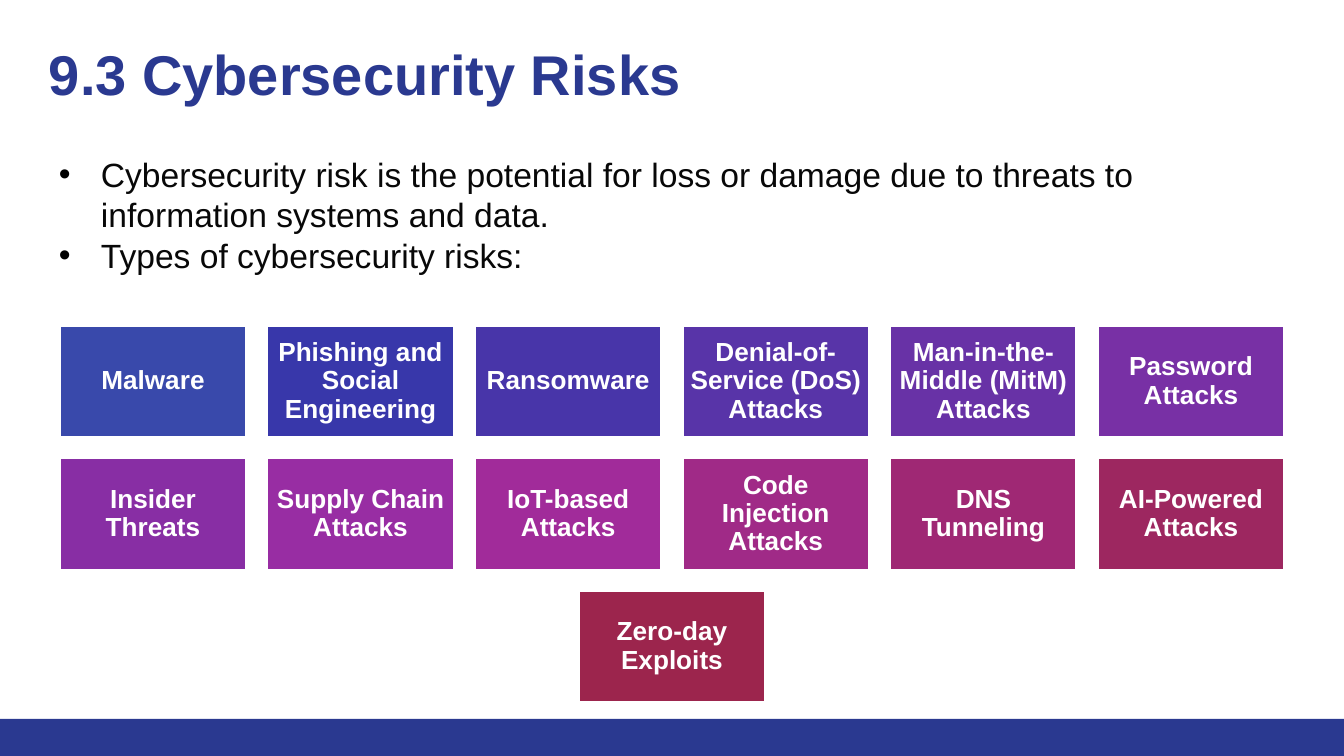
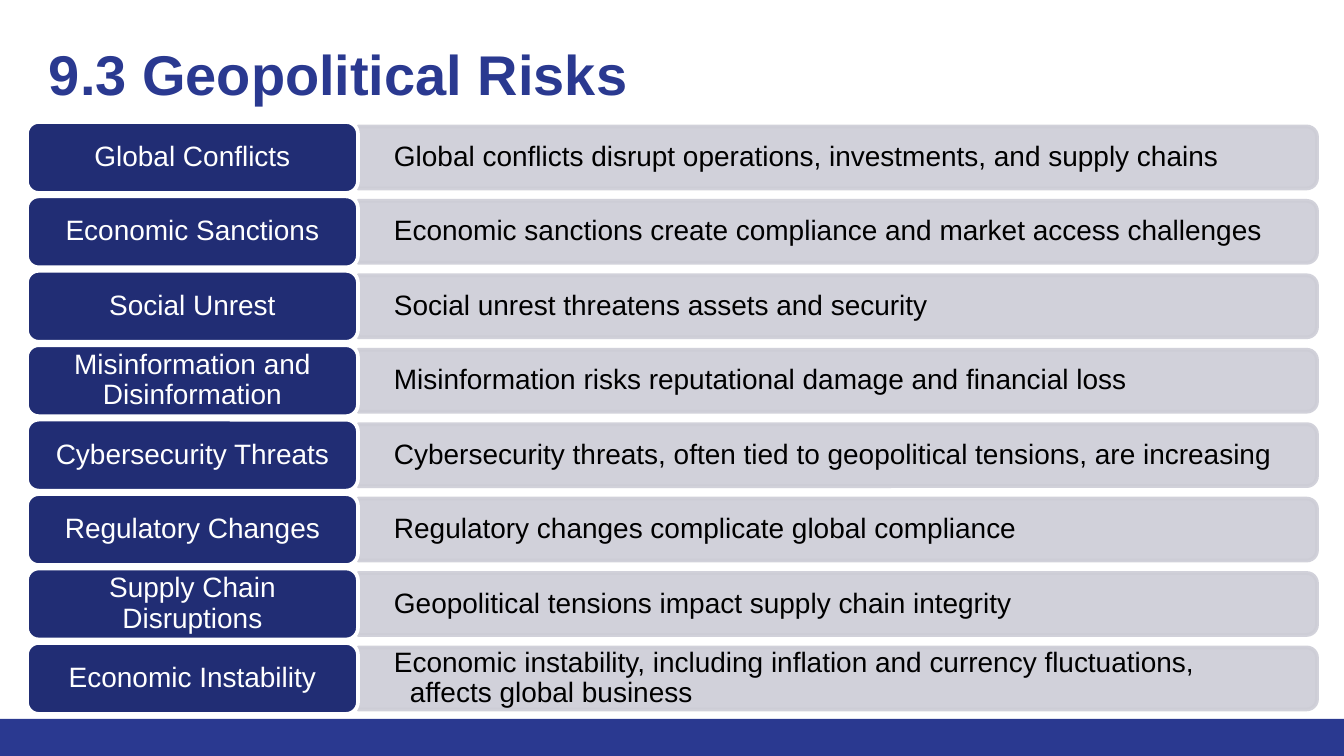
from dataclasses import dataclass
from typing import NamedTuple

import pptx
import pptx.dml.color
import pptx.enum.shapes
import pptx.enum.text
import pptx.oxml.ns
import pptx.util
from lxml import etree

SHAPE = pptx.enum.shapes.MSO_SHAPE
ALIGN = pptx.enum.text.PP_ALIGN
ANCHOR = pptx.enum.text.MSO_ANCHOR
PX_PER_INCH = 134.4


@dataclass(frozen=True)
class Theme:
    font: str = "Arial"
    brand: str = "2A3990"
    label: str = "212D74"
    bar: str = "CDCDD6"
    bar_opacity: int = 90
    white: str = "FFFFFF"
    black: str = "000000"
    body: str = "080808"
    title_size: int = 30
    body_size: int = 18
    row_size: int = 15
    tile_size: int = 14
    outline: int = 2
    tight: float = 0.9


THEME = Theme()


class Box(NamedTuple):
    left: float
    top: float
    width: float
    height: float


SLIDE = Box(0, 0, 1344, 756)
BAND = Box(0, 719, 1344, 37)
TITLE = Box(36, 27, 1236, 120)
INTRO = Box(46, 147, 1253, 136)
TILES = Box(59, 325, 1226, 378)
ROWS = Box(27, 122, 1290, 592)

INTRO_POINTS = [
    "Cybersecurity risk is the potential for loss or damage due to threats to "
    "information systems and data.",
    "Types of cybersecurity risks:",
]

CYBER_RISKS = [
    ("Malware", "3949AB"),
    ("Phishing and Social Engineering", "3837AA"),
    ("Ransomware", "4835A9"),
    ("Denial-of-Service (DoS) Attacks", "5834A8"),
    ("Man-in-the-Middle (MitM) Attacks", "6832A6"),
    ("Password Attacks", "7830A5"),
    ("Insider Threats", "882EA4"),
    ("Supply Chain Attacks", "982DA3"),
    ("IoT-based Attacks", "A12B9A"),
    ("Code Injection Attacks", "A02A87"),
    ("DNS Tunneling", "9F2874"),
    ("AI-Powered Attacks", "9D2760"),
    ("Zero-day Exploits", "9C254D"),
]

GEOPOLITICAL_RISKS = [
    ("Global Conflicts",
     "Global conflicts disrupt operations, investments, and supply chains"),
    ("Economic Sanctions",
     "Economic sanctions create compliance and market access challenges"),
    ("Social Unrest", "Social unrest threatens assets and security"),
    ("Misinformation and Disinformation",
     "Misinformation risks reputational damage and financial loss"),
    ("Cybersecurity Threats",
     "Cybersecurity threats, often tied to geopolitical tensions, are increasing"),
    ("Regulatory Changes", "Regulatory changes complicate global compliance"),
    ("Supply Chain Disruptions",
     "Geopolitical tensions impact supply chain integrity"),
    ("Economic Instability",
     "Economic instability, including inflation and currency fluctuations, "
     "affects global business"),
]


def px(length):
    return pptx.util.Emu(round(length * 914400 / PX_PER_INCH))


def emu(box):
    return [px(length) for length in box]


def rgb(color):
    return pptx.dml.color.RGBColor.from_string(color)


def set_opacity(color_format_owner, percent):
    for color in color_format_owner.iter(pptx.oxml.ns.qn("a:srgbClr")):
        alpha = etree.SubElement(color, pptx.oxml.ns.qn("a:alpha"))
        alpha.set("val", str(percent * 1000))


def add_block(slide, kind, box, fill, line=None):
    block = slide.shapes.add_shape(kind, *emu(box))
    block.shadow.inherit = False
    block.fill.solid()
    block.fill.fore_color.rgb = rgb(fill)
    if line:
        block.line.color.rgb = rgb(line)
        block.line.width = pptx.util.Pt(THEME.outline)
    else:
        block.line.fill.background()
    return block


def set_frame(frame, anchor, inset_x, inset_y):
    frame.word_wrap = True
    frame.auto_size = pptx.enum.text.MSO_AUTO_SIZE.NONE
    frame.vertical_anchor = anchor
    frame.margin_left = frame.margin_right = px(inset_x)
    frame.margin_top = frame.margin_bottom = px(inset_y)


def set_hanging(paragraph, indent, bullet=None):
    properties = paragraph._p.get_or_add_pPr()
    properties.set("marL", str(px(indent)))
    properties.set("indent", str(-px(indent)))
    if bullet:
        qn = pptx.oxml.ns.qn
        color = etree.SubElement(properties, qn("a:buClr"))
        etree.SubElement(color, qn("a:srgbClr")).set("val", THEME.black)
        etree.SubElement(properties, qn("a:buFont")).set("typeface", THEME.font)
        etree.SubElement(properties, qn("a:buChar")).set("char", bullet)


def write(paragraph, text, size, color, bold=False, align=ALIGN.LEFT, spacing=1.0):
    paragraph.text = text
    paragraph.alignment = align
    paragraph.line_spacing = spacing
    font = paragraph.font
    font.name = THEME.font
    font.size = pptx.util.Pt(size)
    font.bold = bold
    font.color.rgb = rgb(color)


def add_titled_slide(deck, heading):
    """Add a slide with the shared bottom band and title style."""
    slide = deck.slides.add_slide(deck.slide_layouts[5])
    add_block(slide, SHAPE.RECTANGLE, BAND, THEME.brand)
    title = slide.shapes.title
    title.left, title.top, title.width, title.height = emu(TITLE)
    set_frame(title.text_frame, ANCHOR.TOP, 13, 13)
    write(title.text_frame.paragraphs[0], heading, THEME.title_size,
          THEME.brand, bold=True)
    return slide


def add_intro(slide, box, points):
    frame = slide.shapes.add_textbox(*emu(box)).text_frame
    set_frame(frame, ANCHOR.TOP, 13, 7)
    for index, point in enumerate(points):
        paragraph = frame.add_paragraph() if index else frame.paragraphs[0]
        set_hanging(paragraph, 42, "•")
        write(paragraph, point, THEME.body_size, THEME.body)


def add_tiles(slide, box, risks, columns=6, width=188, height=113):
    """Fill the box row by row, centring a last row that is not full."""
    row_count = -(-len(risks) // columns)
    step_x = (box.width - width) / (columns - 1)
    step_y = (box.height - height) / (row_count - 1)
    for row in range(row_count):
        row_risks = risks[row * columns:(row + 1) * columns]
        start = box.left + (columns - len(row_risks)) * step_x / 2
        for column, (name, color) in enumerate(row_risks):
            place = Box(start + column * step_x, box.top + row * step_y,
                        width, height)
            tile = add_block(slide, SHAPE.RECTANGLE, place, color, THEME.white)
            set_frame(tile.text_frame, ANCHOR.MIDDLE, 8, 8)
            write(tile.text_frame.paragraphs[0], name, THEME.tile_size,
                  THEME.white, bold=True, align=ALIGN.CENTER,
                  spacing=THEME.tight)


def add_risk_row(slide, box, name, effect, label_width=331, bar_height=62):
    """Place a dark label at the left and its effect on a bar beside it."""
    bar_box = Box(box.left + label_width, box.top + (box.height - bar_height) / 2,
                  box.width - label_width, bar_height)
    # The bar is an upright shape turned a quarter, so its round end faces right.
    upright = Box(bar_box.left + (bar_box.width - bar_height) / 2,
                  bar_box.top + (bar_height - bar_box.width) / 2,
                  bar_height, bar_box.width)
    bar = add_block(slide, SHAPE.ROUND_2_SAME_RECTANGLE, upright,
                    THEME.bar, THEME.bar)
    bar.rotation = 90
    set_opacity(bar._element.spPr, THEME.bar_opacity)

    effect_frame = slide.shapes.add_textbox(*emu(bar_box)).text_frame
    set_frame(effect_frame, ANCHOR.MIDDLE, 36, 0)
    set_hanging(effect_frame.paragraphs[0], 16)
    write(effect_frame.paragraphs[0], effect, THEME.row_size, THEME.black,
          spacing=THEME.tight)

    label = add_block(slide, SHAPE.ROUNDED_RECTANGLE,
                      box._replace(width=label_width), THEME.label, THEME.white)
    set_frame(label.text_frame, ANCHOR.MIDDLE, 8, 4)
    write(label.text_frame.paragraphs[0], name, THEME.row_size, THEME.white,
          align=ALIGN.CENTER, spacing=THEME.tight)


def add_risk_rows(slide, box, risks, row_height=71):
    step = (box.height - row_height) / (len(risks) - 1)
    for index, (name, effect) in enumerate(risks):
        row_box = box._replace(top=box.top + index * step, height=row_height)
        add_risk_row(slide, row_box, name, effect)


def main():
    deck = pptx.Presentation()
    deck.slide_width, deck.slide_height = px(SLIDE.width), px(SLIDE.height)

    cyber = add_titled_slide(deck, "9.3 Cybersecurity Risks")
    add_intro(cyber, INTRO, INTRO_POINTS)
    add_tiles(cyber, TILES, CYBER_RISKS)

    geopolitical = add_titled_slide(deck, "9.3 Geopolitical Risks")
    add_risk_rows(geopolitical, ROWS, GEOPOLITICAL_RISKS)

    deck.save("out.pptx")


if __name__ == "__main__":
    main()
